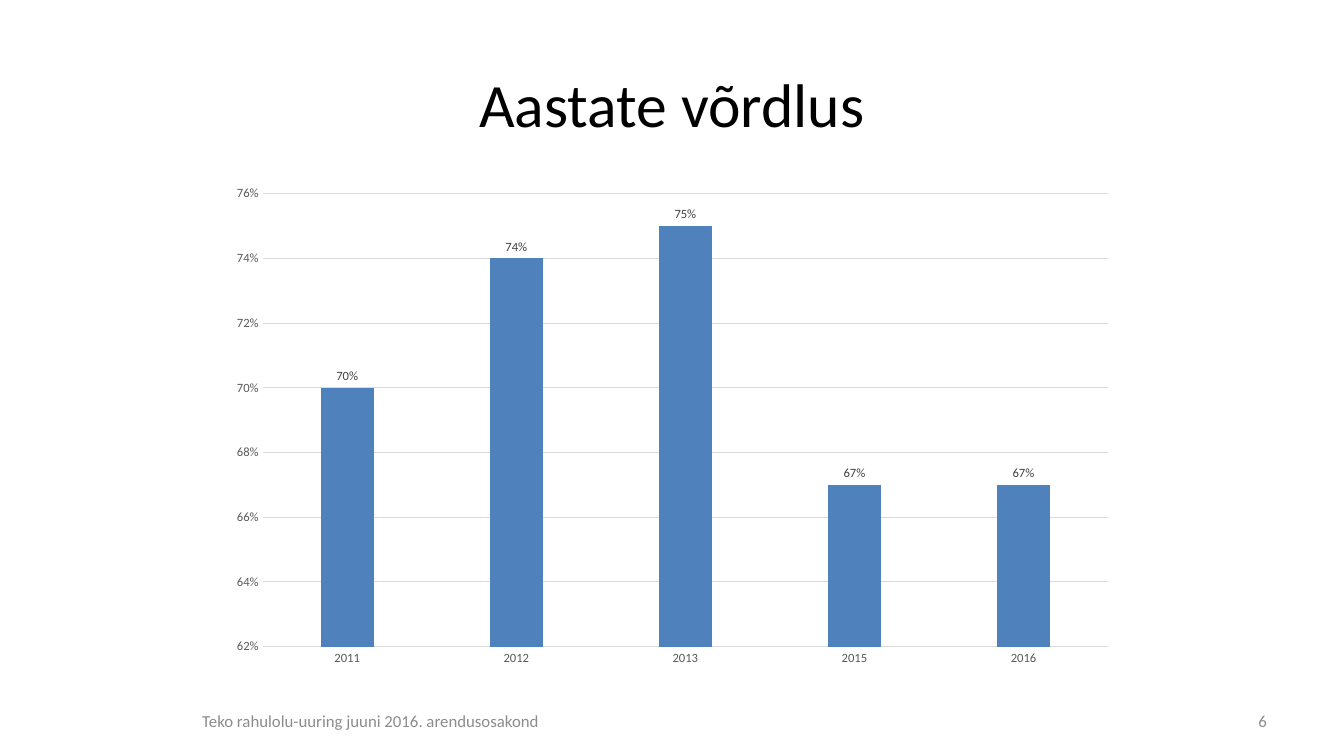
"""Build the slide that compares satisfaction across the years as a column chart."""
from pptx import Presentation
from pptx.chart.data import CategoryChartData
from pptx.dml.color import RGBColor
from pptx.enum.chart import XL_CHART_TYPE as ChartType, XL_LABEL_POSITION as LabelPosition
from pptx.enum.chart import XL_TICK_MARK as TickMark
from pptx.enum.text import MSO_ANCHOR as Anchor, PP_ALIGN as Align
from pptx.util import Inches, Pt

COLORS = {"title": "000000", "bar": "4F81BD", "label": "404040",
          "axis": "595959", "grid": "D9D9D9", "footer": "8C8C8C"}
FONT = "Calibri"
WIDTH, HEIGHT = 13.33, 7.5
MARGIN = WIDTH / 20
YEARS = {"2011": 0.70, "2012": 0.74, "2013": 0.75, "2015": 0.67, "2016": 0.67}


def style_font(font, size, color):
    font.name = FONT
    font.size = Pt(size)
    font.color.rgb = RGBColor.from_string(COLORS[color])


def fill_text(shape, text, size, color, align):
    frame = shape.text_frame
    frame.word_wrap = True
    frame.vertical_anchor = Anchor.MIDDLE
    paragraph = frame.paragraphs[0]
    paragraph.alignment = align
    run = paragraph.add_run()
    run.text = text
    style_font(run.font, size, color)


presentation = Presentation()
presentation.slide_width, presentation.slide_height = Inches(WIDTH), Inches(HEIGHT)
slide = presentation.slides.add_slide(presentation.slide_layouts[5])

title = slide.shapes.title
title.left, title.top = Inches(MARGIN), Inches(0.3)
title.width, title.height = Inches(WIDTH - 2 * MARGIN), Inches(1.45)
fill_text(title, "Aastate võrdlus", 44, "title", Align.CENTER)

chart_data = CategoryChartData(number_format="0%")
chart_data.categories = list(YEARS)
chart_data.add_series("Series 1", list(YEARS.values()))
chart = slide.shapes.add_chart(ChartType.COLUMN_CLUSTERED, Inches(2.17), Inches(1.75),
                               Inches(9), Inches(4.95), chart_data).chart
chart.has_title = False
chart.has_legend = False
style_font(chart.font, 10, "title")

value_axis, category_axis = chart.value_axis, chart.category_axis
for axis in (value_axis, category_axis):
    axis.major_tick_mark = axis.minor_tick_mark = TickMark.NONE
    style_font(axis.tick_labels.font, 9, "axis")
value_axis.minimum_scale, value_axis.maximum_scale = 0.62, 0.76
value_axis.major_unit = 0.02
value_axis.tick_labels.number_format = "0%"
value_axis.tick_labels.number_format_is_linked = False
value_axis.format.line.fill.background()
for line in (value_axis.major_gridlines.format.line, category_axis.format.line):
    line.width = Pt(0.75)
    line.color.rgb = RGBColor.from_string(COLORS["grid"])

plot = chart.plots[0]
plot.gap_width, plot.overlap = 219, -27
plot.vary_by_categories = False
bars = plot.series[0]
bars.format.fill.solid()
bars.format.fill.fore_color.rgb = RGBColor.from_string(COLORS["bar"])
labels = bars.data_labels
labels.show_value = True
labels.position = LabelPosition.OUTSIDE_END
labels.number_format = "0%"
labels.number_format_is_linked = False
style_font(labels.font, 9, "label")

footers = [
    ("Teko rahulolu-uuring juuni 2016. arendusosakond", MARGIN, 6.02, Align.CENTER),
    ("6", WIDTH - MARGIN - 3.11, 3.11, Align.RIGHT),
]
for text, left, width, align in footers:
    footer = slide.shapes.add_textbox(Inches(left), Inches(6.95), Inches(width), Inches(0.4))
    fill_text(footer, text, 12, "footer", align)

presentation.save("out.pptx")
